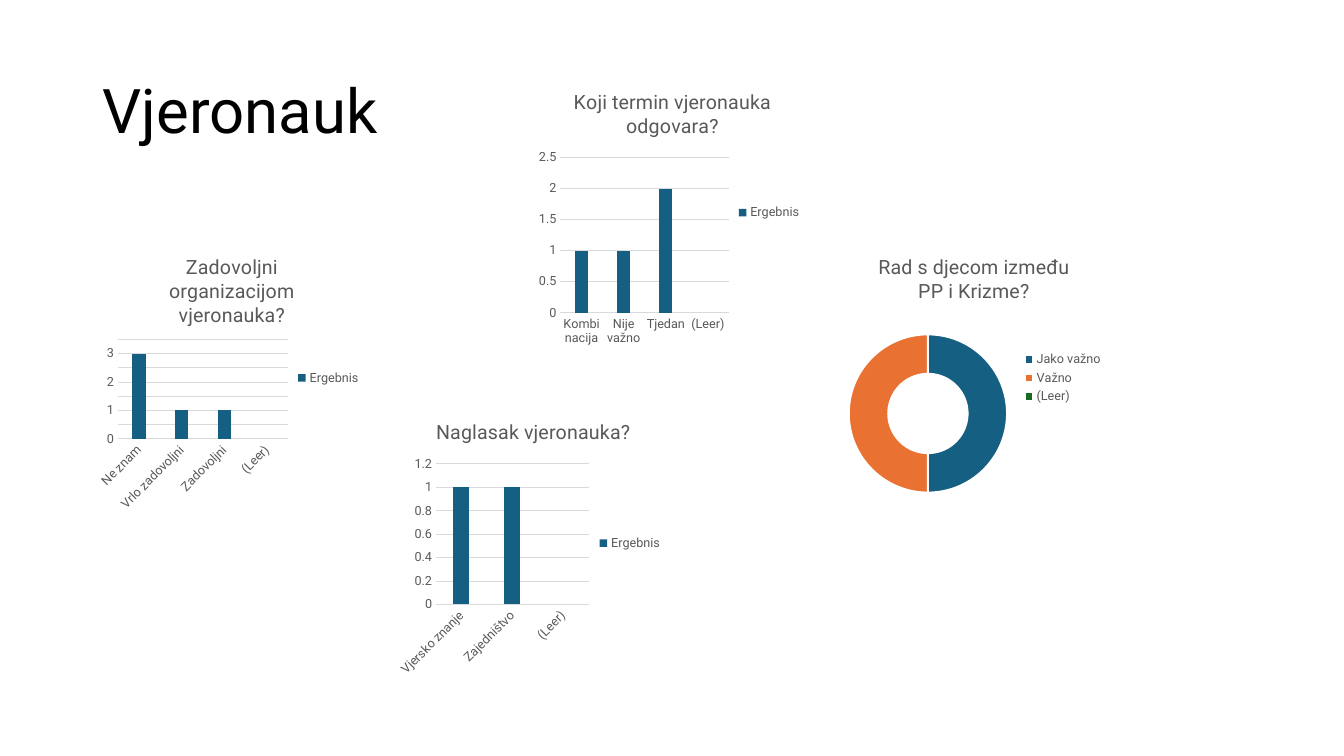
from pptx import Presentation
from pptx.chart.data import CategoryChartData
from pptx.dml.color import RGBColor
from pptx.enum import chart as ch, text
from pptx.util import Inches, Pt

FONT = "Roboto"
BLACK, GREY, GRID, WHITE = "000000", "595959", "D9D9D9", "FFFFFF"
ACCENTS = ["156082", "E97132", "196B24"]

HEADING = "Vjeronauk"
CHART_SIDE = 2.76
# left, top, question, {answer: result}
BAR_QUESTIONS = [
    (0.92, 2.37, "Zadovoljni organizacijom vjeronauka?",
     {"Ne znam": 3, "Vrlo zadovoljni": 1, "Zadovoljni": 1, "(Leer)": None}),
    (5.29, 0.73, "Koji termin vjeronauka odgovara?",
     {"Kombinacija": 1, "Nije važno": 1, "Tjedan": 2, "(Leer)": None}),
    (3.91, 4.01, "Naglasak vjeronauka?",
     {"Vjersko znanje": 1, "Zajedništvo": 1, "(Leer)": None}),
]
RING_QUESTION = (8.28, 2.37, "Rad s djecom između PP i Krizme?",
                 {"Jako važno": 50, "Važno": 50, "(Leer)": None})


def color(hex_string):
    return RGBColor.from_string(hex_string)


def style_font(font, size, hex_string):
    font.name, font.size, font.bold = FONT, Pt(size), False
    font.color.rgb = color(hex_string)


def fill(part, hex_string):
    part.format.fill.solid()
    part.format.fill.fore_color.rgb = color(hex_string)


def style_line(line, hex_string, width):
    line.color.rgb = color(hex_string)
    line.width = Pt(width)


def add_question(slide, kind, series_name, left, top, question, answers):
    data = CategoryChartData()
    data.categories = list(answers)
    data.add_series(series_name, list(answers.values()))
    chart = slide.shapes.add_chart(
        kind, Inches(left), Inches(top), Inches(CHART_SIDE), Inches(CHART_SIDE), data).chart
    style_font(chart.font, 10, BLACK)
    chart.has_title = True
    title = chart.chart_title.text_frame.paragraphs[0]
    title.text = question
    style_font(title.font, 14, GREY)
    chart.has_legend = True
    chart.legend.position = ch.XL_LEGEND_POSITION.RIGHT
    chart.legend.include_in_layout = False
    style_font(chart.legend.font, 9, GREY)
    return chart


def style_axis(axis):
    axis.major_tick_mark = axis.minor_tick_mark = ch.XL_TICK_MARK.NONE
    style_font(axis.tick_labels.font, 9, GREY)
    # Automatic label rotation
    for body in axis._element.xpath("c:txPr/a:bodyPr"):
        body.set("rot", "-60000000")
        body.set("vert", "horz")


prs = Presentation()
prs.slide_width, prs.slide_height = Inches(13.33), Inches(7.5)
slide = prs.slides.add_slide(prs.slide_layouts[6])

# Heading
frame = slide.shapes.add_textbox(
    Inches(0.92), Inches(0.4), Inches(11.5), Inches(1.45)).text_frame
frame.word_wrap = True
frame.vertical_anchor = text.MSO_ANCHOR.MIDDLE
heading = frame.paragraphs[0]
heading.text = HEADING
heading.line_spacing = 0.9
style_font(heading.font, 44, BLACK)

# Bar charts
for bar_question in BAR_QUESTIONS:
    chart = add_question(slide, ch.XL_CHART_TYPE.COLUMN_CLUSTERED, "Ergebnis", *bar_question)
    bars = chart.plots[0]
    bars.vary_by_categories = False
    bars.gap_width, bars.overlap = 219, -27
    fill(bars.series[0], ACCENTS[0])
    style_axis(chart.category_axis)
    style_line(chart.category_axis.format.line, GRID, 0.75)
    style_axis(chart.value_axis)
    chart.value_axis.format.line.fill.background()
    style_line(chart.value_axis.major_gridlines.format.line, GRID, 0.75)

# Ring chart
ring = add_question(slide, ch.XL_CHART_TYPE.DOUGHNUT, "Series 1", *RING_QUESTION).plots[0]
for hole in ring._element.xpath("c:holeSize"):
    hole.set("val", "75")
for index, accent in enumerate(ACCENTS):
    slice_ = ring.series[0].points[index]
    fill(slice_, accent)
    style_line(slice_.format.line, WHITE, 1.5)

prs.save("out.pptx")
